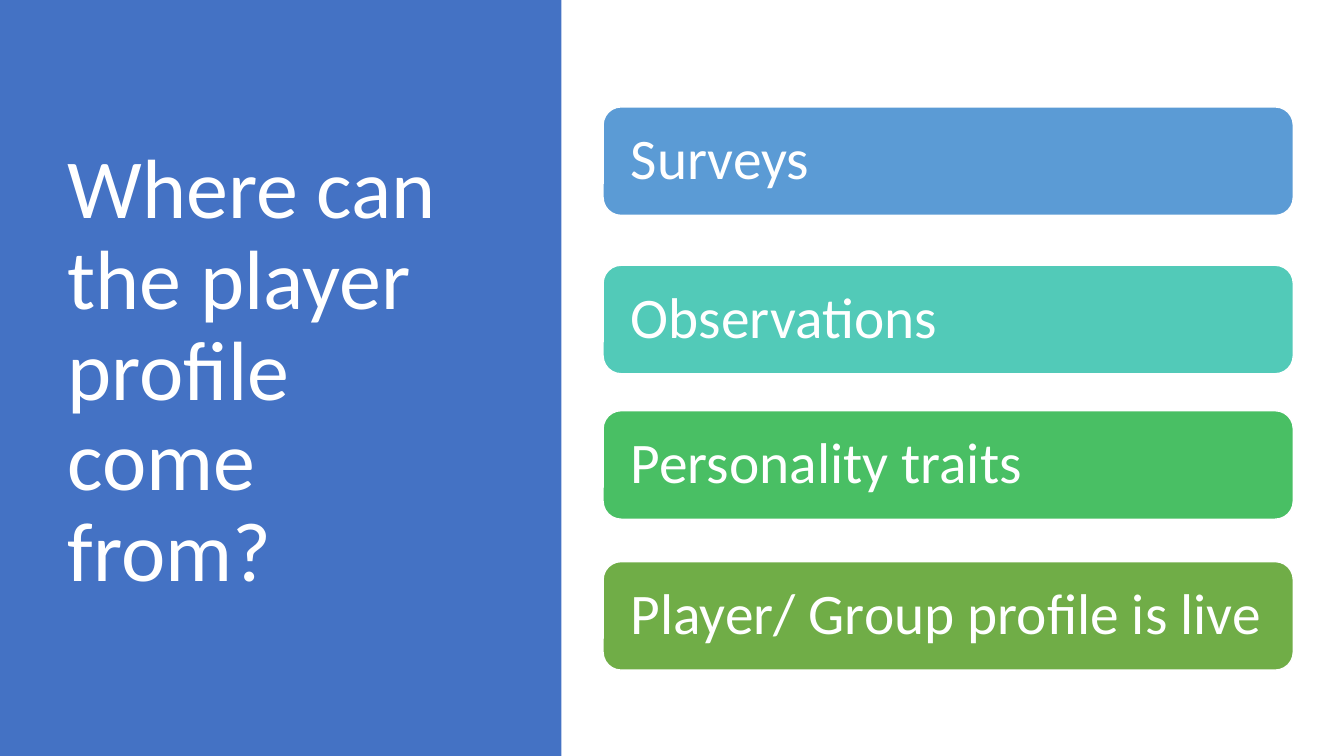
from pptx import Presentation
from pptx import util as u
from pptx.dml import color
from pptx.enum import shapes, text

WHITE = "FFFFFF"


def rgb(value):
    return color.RGBColor.from_string(value)


def write(shape, words, size, margin_x, margin_y):
    """Fill a shape with left-aligned, vertically centred white text."""
    frame = shape.text_frame
    frame.word_wrap = True
    frame.auto_size = text.MSO_AUTO_SIZE.NONE
    frame.vertical_anchor = text.MSO_ANCHOR.MIDDLE
    frame.margin_left = frame.margin_right = u.Pt(margin_x)
    frame.margin_top = frame.margin_bottom = u.Pt(margin_y)
    para = frame.paragraphs[0]
    para.alignment = text.PP_ALIGN.LEFT
    para.line_spacing = 0.9
    span = para.add_run()
    span.text = words
    span.font.name = "Calibri"
    span.font.size = u.Pt(size)
    span.font.color.rgb = rgb(WHITE)


deck = Presentation()
deck.slide_width, deck.slide_height = u.Pt(960), u.Pt(540)
page = deck.slides.add_slide(deck.slide_layouts[5])

# Blue panel behind the title
panel = page.shapes.add_shape(
    shapes.MSO_SHAPE.RECTANGLE, 0, 0, u.Pt(401), deck.slide_height)
panel.shadow.inherit = False
panel.fill.solid()
panel.fill.fore_color.rgb = rgb("4472C4")
panel.line.fill.background()

title = page.shapes.title
title._element.addprevious(panel._element)
title.left, title.top = u.Pt(41), u.Pt(49.7)
title.width, title.height = u.Pt(299.5), u.Pt(433.4)
write(title, "Where can the player profile come from?", size=60, margin_x=7.2, margin_y=3.6)

# Profile sources, from top to bottom
sources = [
    ("Surveys", 76.4, "5B9BD5"),
    ("Observations", 189.5, "52CAB8"),
    ("Personality traits", 293.4, "49BF64"),
    ("Player/ Group profile is live", 401.2, "70AD47"),
]
for label, top, fill in sources:
    box = page.shapes.add_shape(
        shapes.MSO_SHAPE.ROUNDED_RECTANGLE, u.Pt(430.8), u.Pt(top), u.Pt(493), u.Pt(77.5))
    box.shadow.inherit = False
    box.fill.solid()
    box.fill.fore_color.rgb = rgb(fill)
    box.line.color.rgb = rgb(WHITE)
    box.line.width = u.Pt(1)
    write(box, label, size=41, margin_x=16, margin_y=12)

deck.save("out.pptx")
